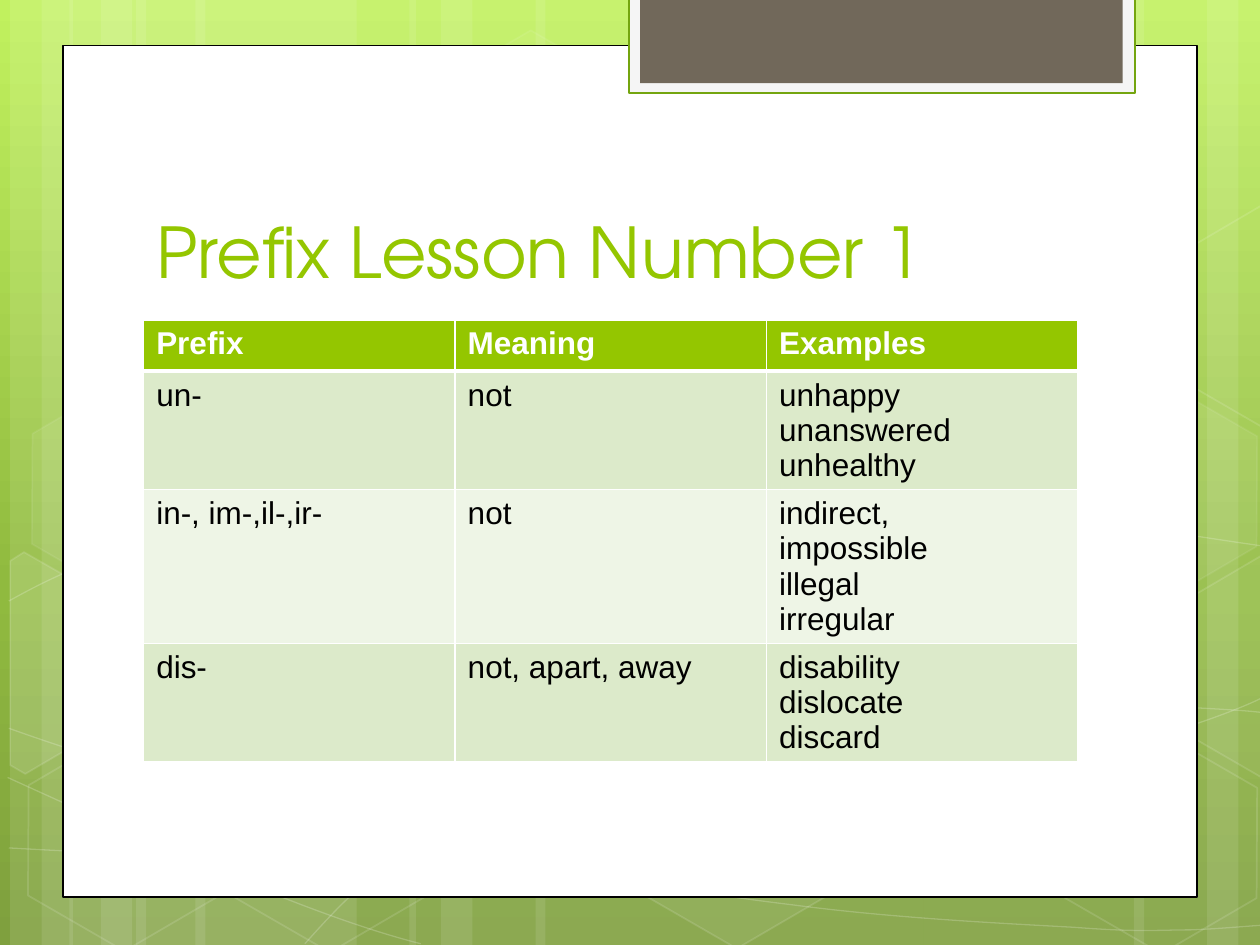
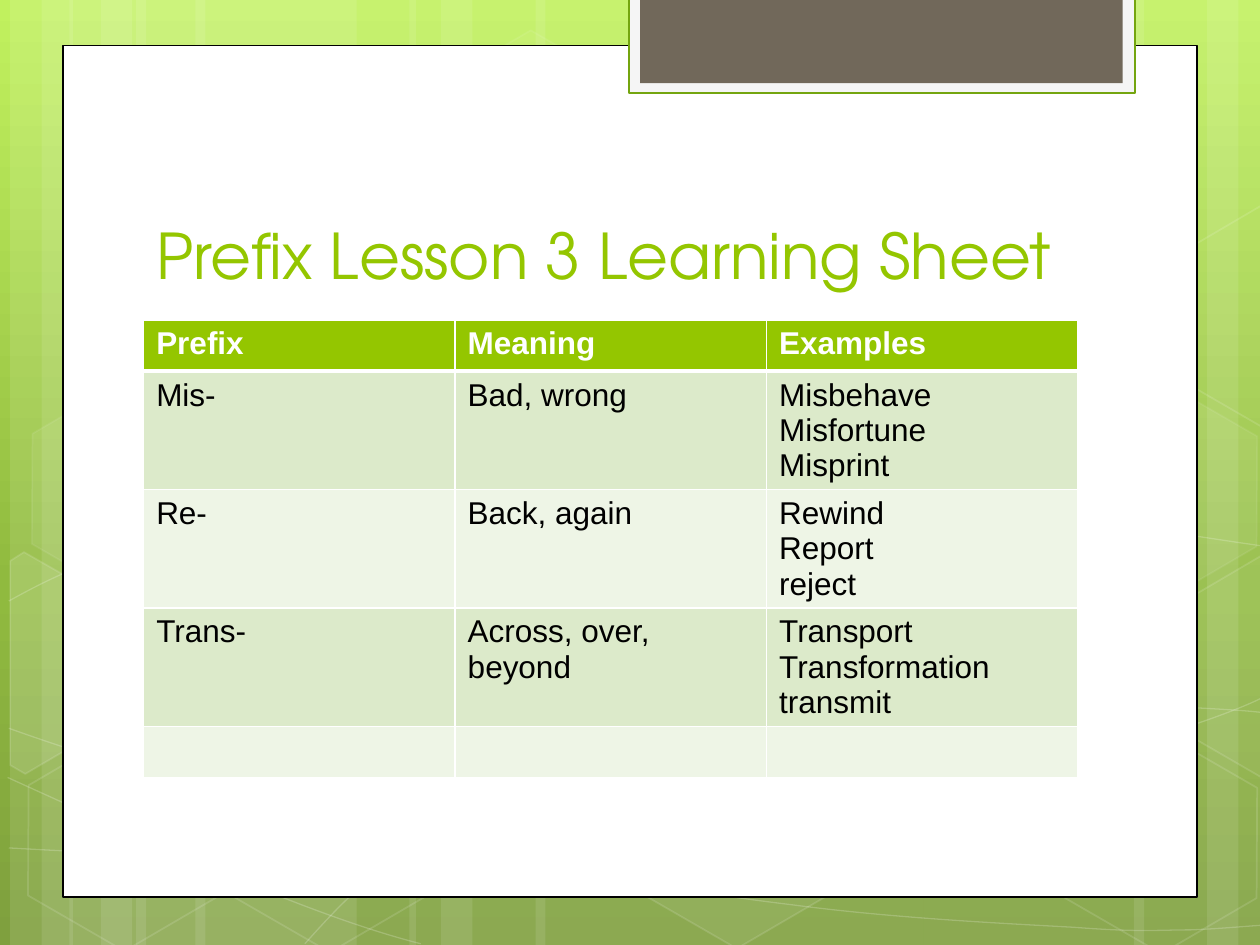
"""Build two prefix lesson slides, each a title and a word table on a green backdrop."""
from copy import deepcopy
from math import cos, radians, sin

from lxml.etree import SubElement
from pptx import Presentation
from pptx.dml.color import RGBColor
from pptx.enum.shapes import MSO_SHAPE, PP_PLACEHOLDER
from pptx.enum.text import MSO_ANCHOR, MSO_AUTO_SIZE, PP_ALIGN
from pptx.oxml.ns import qn
from pptx.util import Inches, Pt

LESSONS = [
    ("Prefix Lesson Number 1", 40, [
        ("un-", "not", "unhappy unanswered\nunhealthy"),
        ("in-, im-,il-,ir-", "not", "indirect,\nimpossible\nillegal\nirregular"),
        ("dis-", "not, apart, away", "disability\ndislocate\ndiscard"),
    ]),
    ("Prefix Lesson 3 Learning Sheet", 36, [
        ("Mis-", "Bad, wrong", "Misbehave\nMisfortune\nMisprint"),
        ("Re-", "Back, again", "Rewind\nReport\nreject"),
        ("Trans-", "Across, over, beyond", "Transport\nTransformation\ntransmit"),
        ("", "", ""),
    ]),
]
HEADER = ("Prefix", "Meaning", "Examples")

WHITE = RGBColor(0xFF, 0xFF, 0xFF)
BLACK = RGBColor(0x00, 0x00, 0x00)
GREEN = RGBColor(0x94, 0xC6, 0x00)
DARK_GREEN = RGBColor(0x74, 0xA5, 0x0F)
PALE_GREY = RGBColor(0xF5, 0xF5, 0xF5)
BROWN = RGBColor(0x71, 0x68, 0x5A)
BANDS = (RGBColor(0xDC, 0xEA, 0xCA), RGBColor(0xEE, 0xF5, 0xE6))
BACKDROP = [(0, RGBColor(0xC1, 0xF1, 0x5E)), (0.62, RGBColor(0x90, 0xBA, 0x3F)),
            (1, RGBColor(0x7F, 0xA0, 0x3E))]
TITLE_FONT, TABLE_FONT = "TeX Gyre Adventor", "Arial"

SLIDE_WIDTH, SLIDE_HEIGHT = 10, 7.5
MARGIN = 1.14
TITLE_BOX = (MARGIN, 1.12, 7.68, 1.25)
TABLE_TOP = 2.54
COLUMN_WIDTH, ROW_HEIGHT = Pt(178), Pt(29.2)

STRIPES = [(1.08, 1.75), (0.08, 0.5), (0.33, 0.83), (1.55, 1.75), (0.55, 0.5), (0.8, 0.83),
           (7.33, 1.75), (9.58, 0.5), (9, 0.83), (4.25, 3.08), (3.25, 0.5), (3.5, 0.83)]

CURVES = [
    [(0.07, 6.73), (0.61, 6.76), (1.15, 6.79), (1.9, 6.78), (2.65, 6.77), (3.58, 6.75),
     (4.58, 6.65), (5.58, 6.55), (7, 6.36), (7.92, 6.17), (8.83, 5.98), (9.77, 5.68),
     (10.07, 5.51)],
    [(0.07, 4.77), (0.36, 4.61), (0.65, 4.46), (1.21, 4.31), (1.78, 4.16), (2.59, 3.94),
     (3.47, 3.87), (4.36, 3.8), (5.44, 3.79), (6.54, 3.87), (7.64, 3.95), (9.47, 4.26),
     (10.07, 4.34)],
    [(0.06, 6.17), (1.27, 6.72), (2.47, 7.27), (3.34, 7.49)],
    [(0.07, 5.78), (0.38, 5.89), (0.7, 6), (1.28, 6.16), (1.86, 6.31), (2.73, 6.56),
     (3.57, 6.73), (4.4, 6.9), (5.45, 7.08), (6.28, 7.18), (7.11, 7.29), (8, 7.33),
     (8.53, 7.36), (9.05, 7.4), (9.19, 7.38), (9.45, 7.38), (9.71, 7.37), (9.89, 7.35),
     (10.07, 7.34)],
    [(2.42, 7.49), (2.6, 7.29), (2.78, 7.09), (3.02, 6.91), (3.26, 6.73), (3.6, 6.53),
     (3.88, 6.39), (4.16, 6.25), (4.33, 6.19), (4.7, 6.09), (5.06, 5.99), (5.73, 5.85),
     (6.08, 5.78), (6.44, 5.71), (6.49, 5.71), (6.8, 5.69), (7.11, 5.66), (7.6, 5.63),
     (7.94, 5.62), (8.29, 5.61), (8.86, 5.62), (8.86, 5.62), (9.08, 5.62), (9.3, 5.62),
     (9.53, 5.62), (9.71, 5.63), (9.88, 5.64), (9.97, 5.65), (10.06, 5.66), (10.03, 5.65),
     (10.06, 5.66)],
]

TILT = 30
HEXAGON_SIZE = (1.75, 1.52)
HEXAGONS = [(3.34, 0.36, 4, 8), (4.97, 5.89, 6, 12), (0.11, 5.91, 0, 12), (0.14, 3.12, 7, 8),
            (1.74, 5.92, 0, 12), (7.53, 4.53, 10, 12), (8.34, 5.93, 0, 12), (8.34, 3.14, 7, 8)]
CUT_HEXAGONS = [
    ((0.36, 5.35), 10,
     [(0.08, 4.45), (0.19, 4.38), (0.96, 4.82), (0.95, 5.7), (0.2, 6.14), (0.08, 6.07)]),
    ((9.85, 5.2), 4,
     [(9.26, 4.85), (10.01, 4.41), (10.09, 4.46), (10.09, 6.13), (10.02, 6.17), (9.26, 5.73)]),
    ((9.85, 2.41), 0,
     [(9.26, 2.07), (10.01, 1.63), (10.1, 1.68), (10.09, 3.35), (10.02, 3.39), (9.26, 2.95)]),
]
PANELS = [
    ((0.5, 0.36, 9, 6.76), WHITE, BLACK, 0.75),
    ((4.99, -0.02, 4.02, 0.76), PALE_GREY, DARK_GREEN, 1.25),
    ((5.08, -0.02, 3.83, 0.68), BROWN, None, 0),
]


def set_opacity(parent, percent):
    color = parent.find(qn("a:solidFill"))[0]
    SubElement(color, qn("a:alpha"), val=str(percent * 1000))


def paint(shape, fill=None, line=None, width=0.0, fill_opacity=100, line_opacity=100):
    shape.shadow.inherit = False
    properties = shape._element.spPr
    if fill is None or fill_opacity == 0:
        shape.fill.background()
    else:
        shape.fill.solid()
        shape.fill.fore_color.rgb = fill
        if fill_opacity < 100:
            set_opacity(properties, fill_opacity)
    if line is None:
        shape.line.fill.background()
    else:
        shape.line.color.rgb = line
        shape.line.width = Pt(width)
        if line_opacity < 100:
            set_opacity(properties.find(qn("a:ln")), line_opacity)


def add_box(slide, kind, *place):
    return slide.shapes.add_shape(kind, *map(Inches, place))


def add_outline(slide, points, close):
    corners = [(Inches(x), Inches(y)) for x, y in points]
    builder = slide.shapes.build_freeform(*corners[0])
    builder.add_line_segments(corners[1:], close=close)
    return builder.convert_to_shape()


def add_curve(slide, points):
    shape = add_outline(slide, points, False)
    outline = shape._element.find(".//" + qn("a:path"))
    segments = outline.findall(qn("a:lnTo"))
    for start in range(0, len(segments), 3):
        curve = SubElement(outline, qn("a:cubicBezTo"))
        for segment in segments[start:start + 3]:
            curve.append(segment[0])
            outline.remove(segment)
    return shape


def turn_back(point, pivot):
    angle = radians(TILT)
    across, down = point[0] - pivot[0], point[1] - pivot[1]
    return (pivot[0] + across * cos(angle) + down * sin(angle),
            pivot[1] - across * sin(angle) + down * cos(angle))


def draw_decoration(slide):
    for left, width in STRIPES:
        paint(add_box(slide, MSO_SHAPE.RECTANGLE, left, 0, width, SLIDE_HEIGHT),
              WHITE, fill_opacity=10)
    for curve in CURVES:
        paint(add_curve(slide, curve), None, WHITE, 0.75, line_opacity=20)
    for left, top, fill_opacity, line_opacity in HEXAGONS:
        hexagon = add_box(slide, MSO_SHAPE.HEXAGON, left, top, *HEXAGON_SIZE)
        hexagon.adjustments[0] = 0.285
        hexagon.rotation = TILT
        paint(hexagon, WHITE, WHITE, 1, fill_opacity, line_opacity)
    for pivot, fill_opacity, corners in CUT_HEXAGONS:
        piece = add_outline(slide, [turn_back(corner, pivot) for corner in corners], True)
        piece.rotation = TILT
        paint(piece, WHITE, WHITE, 1, fill_opacity, 12)
    for place, fill, line, width in PANELS:
        paint(add_box(slide, MSO_SHAPE.RECTANGLE, *place), fill, line, width)


def prepare_layout(layout):
    for holder in list(layout.placeholders):
        if holder.placeholder_format.type != PP_PLACEHOLDER.TITLE:
            layout.shapes._spTree.remove(holder._element)
    fill = layout.background.fill
    fill.gradient()
    fill.gradient_angle = 270
    stop_list = layout._element.find(".//" + qn("a:gsLst"))
    stop_list.append(deepcopy(stop_list[-1]))
    for stop, (position, color) in zip(fill.gradient_stops, BACKDROP):
        stop.position = position
        stop.color.rgb = color


def move_to_layout(slide, layout):
    drawn = [shape for shape in slide.shapes if not shape.is_placeholder]
    for number, shape in enumerate(drawn, start=100):
        shape._element.nvSpPr.cNvPr.set("id", str(number))
        layout.shapes._spTree.append(shape._element)


def set_title(slide, text, size):
    title = slide.shapes.title
    title.left, title.top, title.width, title.height = map(Inches, TITLE_BOX)
    frame = title.text_frame
    frame.text = text
    frame.auto_size = MSO_AUTO_SIZE.NONE
    frame.word_wrap = True
    frame.vertical_anchor = MSO_ANCHOR.BOTTOM
    para = frame.paragraphs[0]
    para.alignment = PP_ALIGN.LEFT
    font = para.runs[0].font
    font.name, font.size, font.color.rgb = TITLE_FONT, Pt(size), GREEN


def set_borders(cell, top, bottom):
    properties = cell._tc.get_or_add_tcPr()
    sides = {"a:lnL": 1, "a:lnR": 1, "a:lnT": top, "a:lnB": bottom}
    for index, (side, width) in enumerate(sides.items()):
        border = SubElement(properties, qn(side), w=str(Pt(width)))
        fill = SubElement(border, qn("a:solidFill"))
        SubElement(fill, qn("a:srgbClr"), val=str(WHITE))
        properties.insert(index, border)


def add_word_table(slide, rows):
    lines = [HEADER] + rows
    frame = slide.shapes.add_table(
        len(lines), len(HEADER), Inches(MARGIN), Inches(TABLE_TOP),
        COLUMN_WIDTH * len(HEADER), ROW_HEIGHT * len(lines))
    for row, line in enumerate(lines):
        is_header = row == 0
        for column, text in enumerate(line):
            cell = frame.table.cell(row, column)
            cell.text_frame.text = text
            cell.fill.solid()
            cell.fill.fore_color.rgb = GREEN if is_header else BANDS[(row - 1) % 2]
            set_borders(cell, 3 if row == 1 else 1, 3 if is_header else 1)
            for para in cell.text_frame.paragraphs:
                for span in para.runs:
                    font = span.font
                    font.name, font.size, font.bold = TABLE_FONT, Pt(18), is_header
                    font.color.rgb = WHITE if is_header else BLACK


def main():
    deck = Presentation()
    deck.slide_width, deck.slide_height = Inches(SLIDE_WIDTH), Inches(SLIDE_HEIGHT)
    layout = deck.slide_layouts.get_by_name("Title Only")
    prepare_layout(layout)
    pages = [deck.slides.add_slide(layout) for _ in LESSONS]
    draw_decoration(pages[0])
    move_to_layout(pages[0], layout)
    for page, (title, size, rows) in zip(pages, LESSONS):
        set_title(page, title, size)
        add_word_table(page, rows)
    deck.save("out.pptx")


if __name__ == "__main__":
    main()
